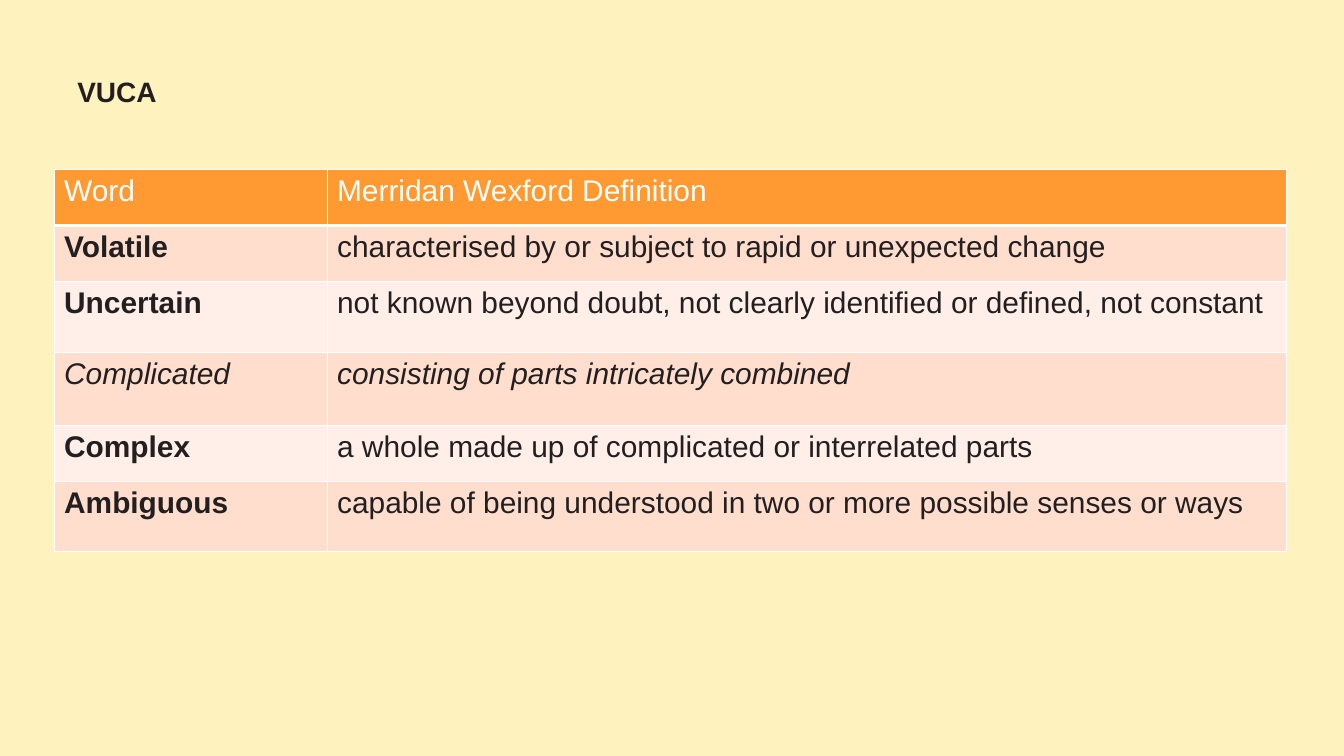
from dataclasses import dataclass

import pptx
import pptx.dml.color
import pptx.enum.text
import pptx.oxml
import pptx.oxml.ns
import pptx.util

Pt = pptx.util.Pt
FONT = "Arial"
COLOURS = {
    "page": "FEF2BE",
    "ink": "231F20",
    "white": "FFFFFF",
    "header": "FF9A32",
    "band_dark": "FFDECE",
    "band_light": "FFEFE8",
}
COLUMN_WIDTHS = (292.5, 1028)


@dataclass
class Entry:
    word: str
    definition: str
    height: float
    word_bold: bool = True
    italic: bool = False


HEADING = Entry("Word", "Merridan Wexford Definition", 59.8, word_bold=False)
ENTRIES = [
    Entry("Volatile", "characterised by or subject to rapid or unexpected change", 59.8),
    Entry("Uncertain",
          "not known beyond doubt, not clearly identified or defined, not constant", 75.6),
    Entry("Complicated", "consisting of parts intricately combined", 78.5,
          word_bold=False, italic=True),
    Entry("Complex", "a whole made up of complicated or interrelated parts", 59.8),
    Entry("Ambiguous",
          "capable of being understood in two or more possible senses or ways", 75.6),
]


def rgb(name: str) -> pptx.dml.color.RGBColor:
    return pptx.dml.color.RGBColor.from_string(COLOURS[name])


def write(frame, text: str, *, size: float, colour: str = "ink",
          bold: bool = False, italic: bool = False, spacing: float = 1.0) -> None:
    para = frame.paragraphs[0]
    para.alignment = pptx.enum.text.PP_ALIGN.LEFT
    para.line_spacing = spacing
    span = para.add_run()
    span.text = text
    span.font.name = FONT
    span.font.size = Pt(size)
    span.font.bold = bold
    span.font.italic = italic
    span.font.color.rgb = rgb(colour)


def set_borders(cell, top: float, bottom: float) -> None:
    properties = cell._tc.get_or_add_tcPr()
    widths = {"lnL": 1, "lnR": 1, "lnT": top, "lnB": bottom}
    for position, (tag, width) in enumerate(widths.items()):
        line = pptx.oxml.parse_xml(
            f'<a:{tag} {pptx.oxml.ns.nsdecls("a")} w="{Pt(width)}"><a:solidFill>'
            f'<a:srgbClr val="{COLOURS["white"]}"/></a:solidFill></a:{tag}>')
        properties.insert(position, line)


def fill_cell(cell, text: str, fill: str, **text_format) -> None:
    cell.margin_left = cell.margin_right = Pt(10.8)
    cell.margin_top = cell.margin_bottom = Pt(5.4)
    cell.fill.solid()
    cell.fill.fore_color.rgb = rgb(fill)
    write(cell.text_frame, text, size=32, **text_format)


def add_title(page, text: str) -> None:
    box = page.shapes.title
    box.left, box.top, box.width, box.height = Pt(75.6), Pt(74.9), Pt(1284.5), Pt(44.6)
    frame = box.text_frame
    frame.auto_size = pptx.enum.text.MSO_AUTO_SIZE.NONE
    frame.vertical_anchor = pptx.enum.text.MSO_ANCHOR.BOTTOM
    write(frame, text, size=30, bold=True, spacing=0.9)


def add_definitions(page) -> None:
    rows = [HEADING, *ENTRIES]
    table = page.shapes.add_table(
        len(rows), len(COLUMN_WIDTHS), Pt(57.9), Pt(182), Pt(sum(COLUMN_WIDTHS)),
        Pt(sum(entry.height for entry in rows))).table
    for column, width in zip(table.columns, COLUMN_WIDTHS):
        column.width = Pt(width)
    for index, entry in enumerate(rows):
        table.rows[index].height = Pt(entry.height)
        fill = "header" if index == 0 else ("band_light", "band_dark")[index % 2]
        colour = "white" if index == 0 else "ink"
        cells = ((entry.word, entry.word_bold), (entry.definition, False))
        for column, (text, bold) in enumerate(cells):
            cell = table.cell(index, column)
            fill_cell(cell, text, fill, colour=colour, bold=bold, italic=entry.italic)
            # The rule under the heading is heavier than the rest
            set_borders(cell, top=3 if index == 1 else 1, bottom=3 if index == 0 else 1)


def main() -> None:
    deck = pptx.Presentation()
    deck.slide_width, deck.slide_height = Pt(1440), Pt(810)

    # Title-only page with a plain background
    page = deck.slides.add_slide(deck.slide_layouts.get_by_name("Title Only"))
    page.background.fill.solid()
    page.background.fill.fore_color.rgb = rgb("page")

    # Content
    add_title(page, "VUCA")
    add_definitions(page)
    deck.save("out.pptx")


if __name__ == "__main__":
    main()
